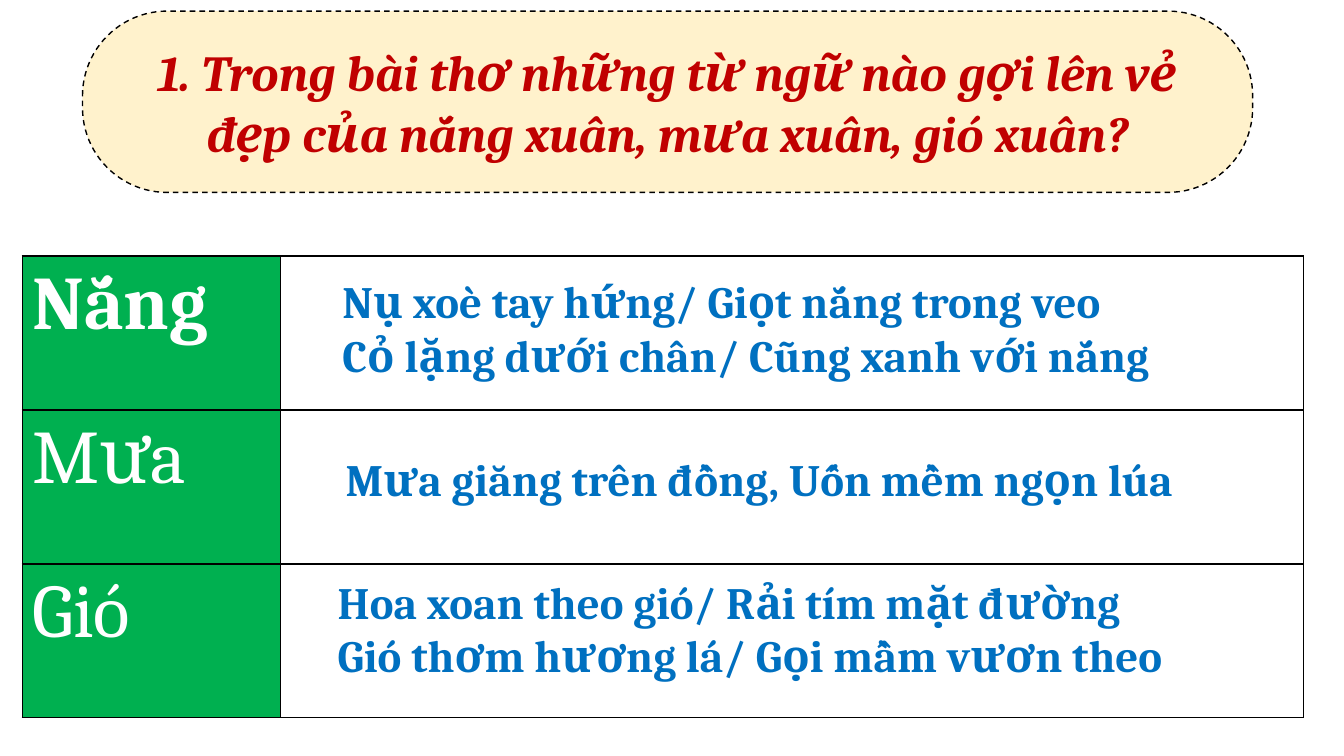
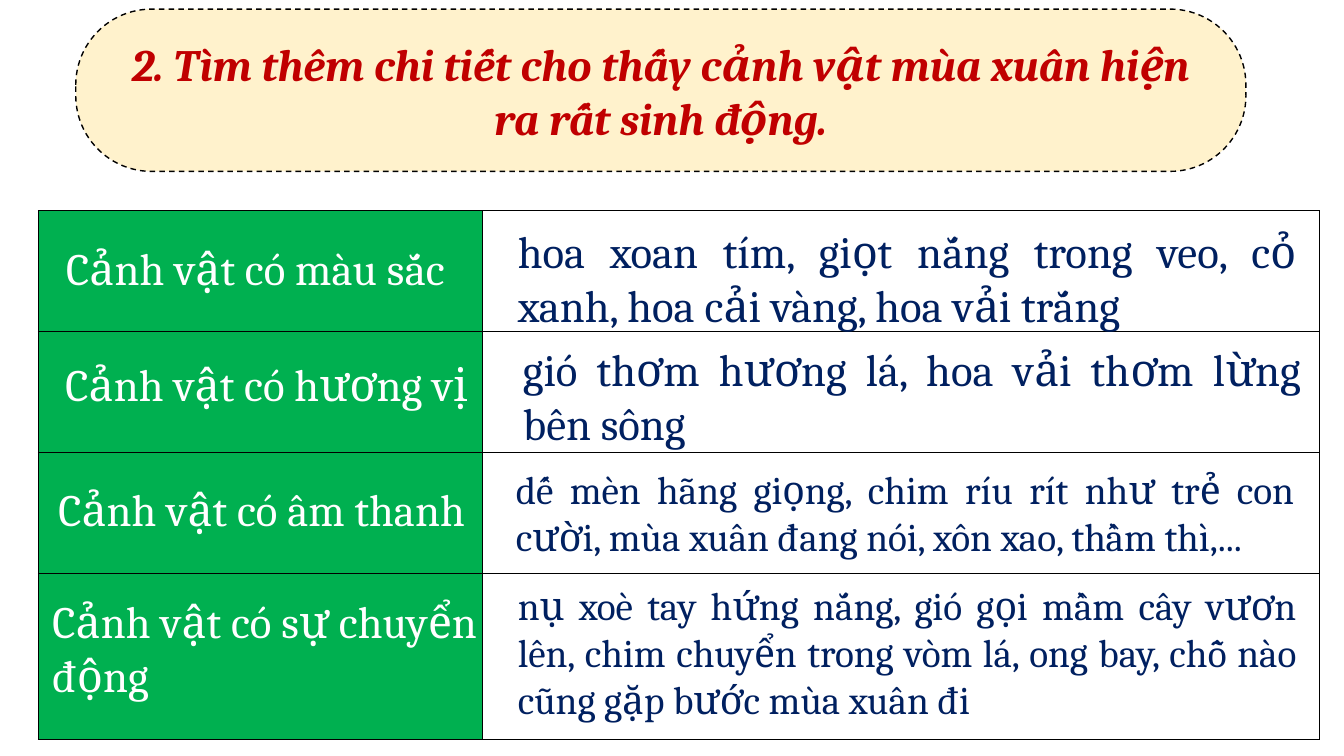
from itertools import product

from lxml.etree import SubElement
from pptx import Presentation
from pptx.dml.color import RGBColor
from pptx.enum.dml import MSO_LINE_DASH_STYLE as Dash
from pptx.enum.shapes import MSO_SHAPE as Shape
from pptx.enum.text import MSO_ANCHOR as Anchor, PP_ALIGN as Align
from pptx.oxml.ns import qn
from pptx.util import Cm, Pt

COLORS = {
    "cream": "FFF2CC",
    "black": "000000",
    "red": "C00000",
    "green": "00B050",
    "white": "FFFFFF",
    "blue": "0070C0",
    "navy": "002060",
}
FONT = "Cambria"
BANNER_WIDTH = 29.49

# Poem lines per row: label, offset in the answer cell (x, y), height, lines
POEM_ROWS = [
    ("Nắng", (1.32, 0.33), 3.0,
     ["Nụ xoè tay hứng/ Giọt nắng trong veo",
      "Cỏ lặng dưới chân/ Cũng xanh với nắng"]),
    ("Mưa", (1.4, 0.92), 1.63,
     ["Mưa giăng trên đồng, Uốn mềm ngọn lúa"]),
    ("Gió", (1.2, 0.14), 3.0,
     ["Hoa xoan theo gió/ Rải tím mặt đường",
      "Gió thơm hương lá/ Gọi mầm vươn theo"]),
]

# Scenery rows: label, its offset and size, detail, its offset, height and type size
SCENE_ROWS = [
    ("Cảnh vật có màu sắc", (0.45, 0.63), (10.44, 1.63),
     "hoa xoan tím, giọt nắng trong veo, cỏ xanh, hoa cải vàng, hoa vải trắng",
     (0.65, 0.2), 3.0, 32),
    ("Cảnh vật có hương vị", (0.43, 0.5), (10.77, 1.63),
     "gió thơm hương lá, hoa vải thơm lừng bên sông",
     (0.78, 0.12), 3.0, 32),
    ("Cảnh vật có âm thanh", (0.25, 0.6), (11.28, 1.63),
     "dế mèn hãng giọng, chim ríu rít như trẻ con cười, "
     "mùa xuân đang nói, xôn xao, thầm thì,...",
     (0.6, 0.2), 2.64, 28),
    ("Cảnh vật có sự chuyển động", (0.1, 0.37), (11.33, 3.0),
     "nụ xoè tay hứng nắng, gió gọi mầm cây vươn lên, chim chuyển trong vòm lá, "
     "ong bay, chỗ nào cũng gặp bước mùa xuân đi",
     (0.65, 0.07), 3.84, 28),
]


def rgb(name):
    return RGBColor.from_string(COLORS[name])


def write(frame, lines, size, color, align=Align.LEFT, bold=False, italic=False):
    """Write each line as one paragraph with one run."""
    frame.word_wrap = True
    for index, line in enumerate(lines):
        para = frame.add_paragraph() if index else frame.paragraphs[0]
        para.alignment = align
        span = para.add_run()
        span.text = line
        span.font.name = FONT
        span.font.size = Pt(size)
        span.font.bold = bold
        span.font.italic = italic
        span.font.color.rgb = rgb(color)


def add_text(page, corner, offset, size, lines, points, color, **style):
    """Place a text box at an offset from the corner of a cell."""
    left, top = (start + shift for start, shift in zip(corner, offset))
    box = page.shapes.add_textbox(Cm(left), Cm(top), *map(Cm, size))
    write(box.text_frame, lines, points, color, **style)


def add_banner(page, left, top, height, question, points):
    """Draw the dashed, rounded question banner."""
    banner = page.shapes.add_shape(Shape.ROUNDED_RECTANGLE, Cm(left), Cm(top),
                                   Cm(BANNER_WIDTH), Cm(height))
    banner.adjustments[0] = 0.467
    banner.shadow.inherit = False
    banner.fill.solid()
    banner.fill.fore_color.rgb = rgb("cream")
    banner.line.color.rgb = rgb("black")
    banner.line.width = Pt(1)
    banner.line.dash_style = Dash.DASH
    banner.text_frame.vertical_anchor = Anchor.MIDDLE
    write(banner.text_frame, [question], points, "red", Align.CENTER, True, True)


def style_cell(cell, color):
    """Give a cell thin black borders, then its fill."""
    properties = cell._tc.get_or_add_tcPr()
    for side in ("a:lnL", "a:lnR", "a:lnT", "a:lnB"):
        border = SubElement(properties, qn(side), w=str(Pt(1)))
        fill = SubElement(border, qn("a:solidFill"))
        SubElement(fill, qn("a:srgbClr"), val=COLORS["black"])
    cell.fill.solid()
    cell.fill.fore_color.rgb = rgb(color)


def add_grid(page, left, top, widths, heights):
    """Draw the two-column table; return it and the corners of its cells by row."""
    table = page.shapes.add_table(len(heights), len(widths), Cm(left), Cm(top),
                                  Cm(sum(widths)), Cm(sum(heights))).table
    for column, width in zip(table.columns, widths):
        column.width = Cm(width)
    for row, height in zip(table.rows, heights):
        row.height = Cm(height)
    for row, column in product(range(len(heights)), range(len(widths))):
        style_cell(table.cell(row, column), "white" if column else "green")
    corners = [[(left + sum(widths[:column]), top + sum(heights[:row]))
                for column in range(len(widths))] for row in range(len(heights))]
    return table, corners


def build_poem_slide(page):
    add_banner(page, 2.08, 0.28, 4.57,
               "1. Trong bài thơ những từ ngữ nào gợi lên vẻ đẹp của "
               "nắng xuân, mưa xuân, gió xuân?", 36)
    table, corners = add_grid(page, 0.56, 6.45, [6.5, 25.78], [3.88] * 3)
    for row, (label, offset, height, lines) in enumerate(POEM_ROWS):
        write(table.cell(row, 0).text_frame, [label], 54, "white", bold=row == 0)
        add_text(page, corners[row][1], offset, (22.02, height), lines, 32, "blue",
                 align=Align.JUSTIFY, bold=True)


def build_scene_slide(page):
    add_banner(page, 1.91, 0.23, 4.09,
               "2. Tìm thêm chi tiết cho thấy cảnh vật mùa xuân hiện ra rất sinh động.",
               32)
    _, corners = add_grid(page, 0.97, 5.31, [11.18, 21.11], [3.05] * 3 + [4.17])
    for (label_corner, detail_corner), scene in zip(corners, SCENE_ROWS):
        label, label_offset, label_size, detail, offset, height, points = scene
        add_text(page, label_corner, label_offset, label_size, [label], 32, "white")
        add_text(page, detail_corner, offset, (20.12, height), [detail], points,
                 "navy", align=Align.JUSTIFY)


def main():
    deck = Presentation()
    deck.slide_width, deck.slide_height = Cm(33.87), Cm(19.05)
    for build in (build_poem_slide, build_scene_slide):
        build(deck.slides.add_slide(deck.slide_layouts[6]))
    deck.save("out.pptx")


if __name__ == "__main__":
    main()
